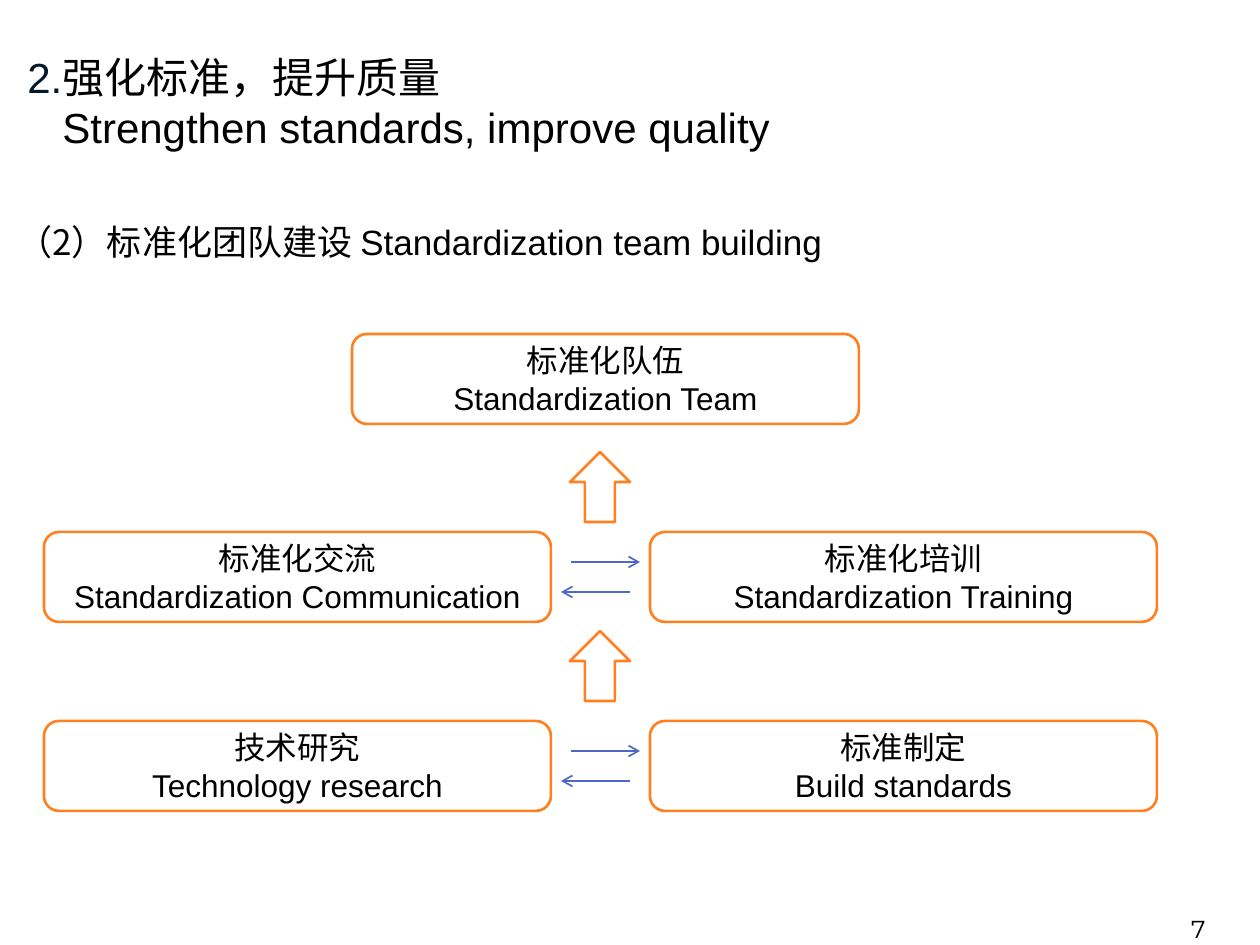
from lxml.etree import SubElement
from pptx import Presentation
from pptx.dml.color import RGBColor
from pptx.enum.shapes import MSO_CONNECTOR, MSO_SHAPE
from pptx.enum.text import MSO_ANCHOR, PP_ALIGN
from pptx.oxml.ns import qn
from pptx.util import Emu, Pt

SCALE = 914400 / 126
HAN = "Noto Sans CJK SC"
LATIN = "Arial"
BLACK, NAVY, WHITE = "000000", "031828", "FFFFFF"
ORANGE, BLUE = "FF8021", "4E67C8"


def px(n):
    """Turn pixels into EMU."""
    return Emu(round(n * SCALE))


def color(code):
    """Turn a hex string into a colour."""
    return RGBColor.from_string(code)


def add_run(para, text, size, font=LATIN, code=BLACK):
    """Add one run with its Latin and East Asian fonts."""
    run = para.add_run()
    run.text = text
    run.font.size = Pt(size)
    run.font.color.rgb = color(code)
    run.font.name = font
    SubElement(run.font._element, qn("a:ea")).set("typeface", HAN)


def add_text(slide, x, y, w, h):
    """Add a wrapping text box and return its frame."""
    frame = slide.shapes.add_textbox(px(x), px(y), px(w), px(h)).text_frame
    frame.word_wrap = True
    return frame


def add_shape(slide, kind, x, y, w, h):
    """Add a white shape with an orange outline."""
    shape = slide.shapes.add_shape(kind, px(x), px(y), px(w), px(h))
    shape.shadow.inherit = False
    shape.fill.solid()
    shape.fill.fore_color.rgb = color(WHITE)
    shape.line.color.rgb = color(ORANGE)
    shape.line.width = Pt(1.5)
    return shape


def add_box(slide, x, y, w, h, lines):
    """Add a rounded box with a Chinese and an English line."""
    frame = add_shape(slide, MSO_SHAPE.ROUNDED_RECTANGLE, x, y, w, h).text_frame
    frame.word_wrap = True
    frame.vertical_anchor = MSO_ANCHOR.MIDDLE
    for i, line in enumerate(lines):
        para = frame.add_paragraph() if i else frame.paragraphs[0]
        para.alignment = PP_ALIGN.CENTER
        add_run(para, line, 18)


def add_arrow(slide, start, end, y):
    """Add a level line with an open arrowhead at its end."""
    line = slide.shapes.add_connector(
        MSO_CONNECTOR.STRAIGHT, px(start), px(y), px(end), px(y))
    line.line.color.rgb = color(BLUE)
    line.line.width = Pt(1)
    SubElement(line.line._get_or_add_ln(), qn("a:tailEnd")).set("type", "arrow")
    SubElement(line._element.spPr, qn("a:effectLst"))


def add_pair(slide, x, y, w, h, left, right):
    """Add two boxes that exchange arrows across the gap between them."""
    wide = 507
    mid = x + wide
    far = x + w - wide
    add_box(slide, x, y, wide, h, left)
    add_box(slide, far, y, wide, h, right)
    add_arrow(slide, mid + 20, far - 10, y + h // 3)
    add_arrow(slide, far - 20, mid + 10, y + h * 2 // 3)


def add_chart(slide, x, y, w):
    """Add the team diagram: one box above two linked pairs."""
    high = 90
    add_box(slide, x + 308, y, 507, high, ("标准化队伍", "Standardization Team"))
    add_pair(slide, x, y + 198, w, high,
             ("标准化交流", "Standardization Communication"),
             ("标准化培训", "Standardization Training"))
    add_pair(slide, x, y + 387, w, high,
             ("技术研究", "Technology research"),
             ("标准制定", "Build standards"))
    for top in (118, 297):
        add_shape(slide, MSO_SHAPE.UP_ARROW, x + 526, y + top, 60, 70)


def add_title(slide, x, y, w, h):
    """Add the two-line title."""
    frame = add_text(slide, x, y, w, h)
    para = frame.paragraphs[0]
    add_run(para, "2.", 24, code=NAVY)
    add_run(para, "强化标准，提升质量", 24, HAN)
    para = frame.add_paragraph()
    para._p.get_or_add_pPr().set("marL", str(px(35)))
    add_run(para, "Strengthen standards, improve quality", 24)


def add_topic(slide, x, y, w, h):
    """Add the section line."""
    para = add_text(slide, x, y, w, h).paragraphs[0]
    add_run(para, "（2）标准化团队建设 ", 20, HAN)
    add_run(para, "Standardization team building", 20)


def add_page(slide, x, y, w, h):
    """Add the page number."""
    para = add_text(slide, x, y, w, h).paragraphs[0]
    para.alignment = PP_ALIGN.RIGHT
    add_run(para, "7", 14, "Montserrat")


def main():
    """Build and save the slide."""
    deck = Presentation()
    deck.slide_width, deck.slide_height = px(1260), px(945)
    slide = deck.slides.add_slide(deck.slide_layouts[6])
    add_page(slide, 924, 908, 294, 45)
    add_title(slide, 15, 45, 1191, 115)
    add_topic(slide, 5, 214, 1150, 55)
    add_chart(slide, 44, 334, 1113)
    deck.save("out.pptx")


if __name__ == "__main__":
    main()
